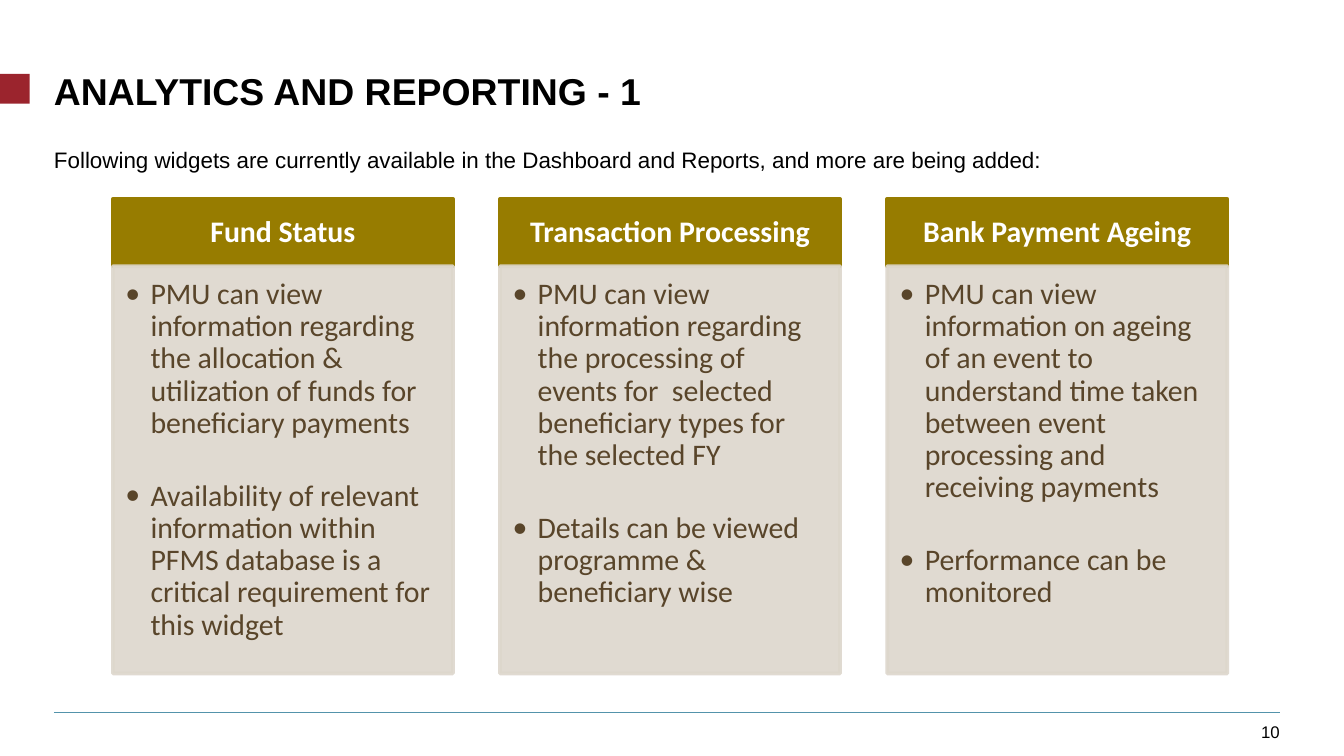
import pptx
import pptx.util
import pptx.dml.color
import pptx.enum.shapes
import pptx.enum.text
import pptx.oxml.ns
from lxml import etree

Pt = pptx.util.Pt
qn = pptx.oxml.ns.qn
ALIGN = pptx.enum.text.PP_ALIGN
ANCHOR = pptx.enum.text.MSO_ANCHOR

COLORS = {
    "black": "000000",
    "white": "FFFFFF",
    "marker": "9B242D",
    "rule": "5393AB",
    "header": "977C00",
    "panel": "DDD7CC",
    "panel_text": "59452A",
}

COLUMNS = [
    ("Fund Status", [
        "PMU can view information regarding the allocation & utilization of funds for beneficiary payments",
        "Availability of relevant information within PFMS database is a critical requirement for this widget",
    ]),
    ("Transaction Processing", [
        "PMU can view information regarding the processing of events for  selected beneficiary types for the selected FY",
        "Details can be viewed programme & beneficiary wise",
    ]),
    ("Bank Payment Ageing", [
        "PMU can view information on ageing of an event to understand time taken between event processing and receiving payments",
        "Performance can be monitored",
    ]),
]
COLUMN_LEFT, COLUMN_WIDTH, COLUMN_PITCH = 60.5, 182.2, 207.4
HEADER_TOP, HEADER_HEIGHT, PANEL_HEIGHT = 106.6, 36, 218.2


def color(name):
    return pptx.dml.color.RGBColor.from_string(COLORS[name])


def write_text(shape, lines, size=16, font="Arial", fill="black", bold=False,
               align=ALIGN.LEFT, anchor=ANCHOR.TOP, insets=(0, 0, 0, 0),
               spacing=1.0, gap=0, indent=0, bullet=None):
    """Fill a shape with one paragraph per line; gap separates paragraphs."""
    frame = shape.text_frame
    frame.text = "\n".join(lines)
    frame.word_wrap = True
    frame.auto_size = pptx.enum.text.MSO_AUTO_SIZE.NONE
    frame.vertical_anchor = anchor
    frame.margin_left, frame.margin_top, frame.margin_right, frame.margin_bottom = map(Pt, insets)
    for index, paragraph in enumerate(frame.paragraphs):
        properties = paragraph._p.get_or_add_pPr()
        properties.set("marL", str(Pt(indent)))
        properties.set("indent", str(-Pt(indent)))
        if bullet:
            etree.SubElement(properties, qn("a:buFont"), typeface=font)
            etree.SubElement(properties, qn("a:buChar"), char=bullet)
        else:
            etree.SubElement(properties, qn("a:buNone"))
        paragraph.alignment = align
        paragraph.line_spacing = spacing
        paragraph.space_before = Pt(gap if index else 0)
        paragraph.space_after = Pt(0)
        paragraph.font.name = font
        paragraph.font.size = Pt(size)
        paragraph.font.bold = bold
        paragraph.font.color.rgb = color(fill)


class SlideBuilder:
    def __init__(self, slide):
        self.slide = slide

    def placeholder(self, index, box, text, **style):
        shape = self.slide.placeholders[index]
        shape.left, shape.top, shape.width, shape.height = map(Pt, box)
        write_text(shape, [text], **style)

    def text_box(self, box, text, **style):
        write_text(self.slide.shapes.add_textbox(*map(Pt, box)), [text], **style)

    def rectangle(self, box, fill, line_width=0, opacity=100):
        shape = self.slide.shapes.add_shape(
            pptx.enum.shapes.MSO_SHAPE.RECTANGLE, *map(Pt, box))
        shape.shadow.inherit = False
        shape.fill.solid()
        shape.fill.fore_color.rgb = color(fill)
        if line_width:
            shape.line.width = Pt(line_width)
            shape.line.color.rgb = color(fill)
        else:
            shape.line.fill.background()
        if opacity < 100:
            for element in list(shape._element.spPr.iter(qn("a:srgbClr"))):
                etree.SubElement(element, qn("a:alpha"), val=str(opacity * 1000))
        return shape

    def rule(self, left, right, top):
        connector = self.slide.shapes.add_connector(
            pptx.enum.shapes.MSO_CONNECTOR.STRAIGHT, Pt(left), Pt(top), Pt(right), Pt(top))
        connector.line.width = Pt(0.5)
        connector.line.color.rgb = color("rule")
        etree.SubElement(connector._element.spPr, qn("a:effectLst"))

    def column(self, left, heading, points):
        header = self.rectangle((left, HEADER_TOP, COLUMN_WIDTH, HEADER_HEIGHT), "header", 2)
        write_text(header, [heading], font="Calibri", fill="white", bold=True,
                   align=ALIGN.CENTER, anchor=ANCHOR.MIDDLE,
                   insets=(9, 5, 9, 5), spacing=0.9)
        panel = self.rectangle(
            (left, HEADER_TOP + HEADER_HEIGHT, COLUMN_WIDTH, PANEL_HEIGHT), "panel", 2, 90)
        write_text(panel, points, font="Calibri", fill="panel_text",
                   insets=(6.7, 6.7, 9, 10), spacing=0.9, gap=21.8,
                   indent=13.5, bullet="•")


def main():
    presentation = pptx.Presentation()
    presentation.slide_width, presentation.slide_height = Pt(720), Pt(405)
    slide = presentation.slides.add_slide(presentation.slide_layouts[1])
    builder = SlideBuilder(slide)

    builder.rectangle((0, 39.6, 16, 16), "marker")
    builder.rule(28.9, 685.6, 381.7)
    builder.text_box((670.6, 385.2, 15, 12.2), "10", size=9,
                     align=ALIGN.RIGHT, anchor=ANCHOR.BOTTOM)
    builder.placeholder(0, (28.9, 37.4, 656, 30.2), "ANALYTICS AND REPORTING - 1",
                        size=20, bold=True, spacing=Pt(23))
    builder.placeholder(
        1, (28.9, 69.1, 656, 24.5),
        "Following widgets are currently available in the Dashboard and Reports, and more are being added:",
        size=12, spacing=1.5, insets=(0, 2, 0, 0))
    for index, (heading, points) in enumerate(COLUMNS):
        builder.column(COLUMN_LEFT + index * COLUMN_PITCH, heading, points)

    presentation.save("out.pptx")


if __name__ == "__main__":
    main()
